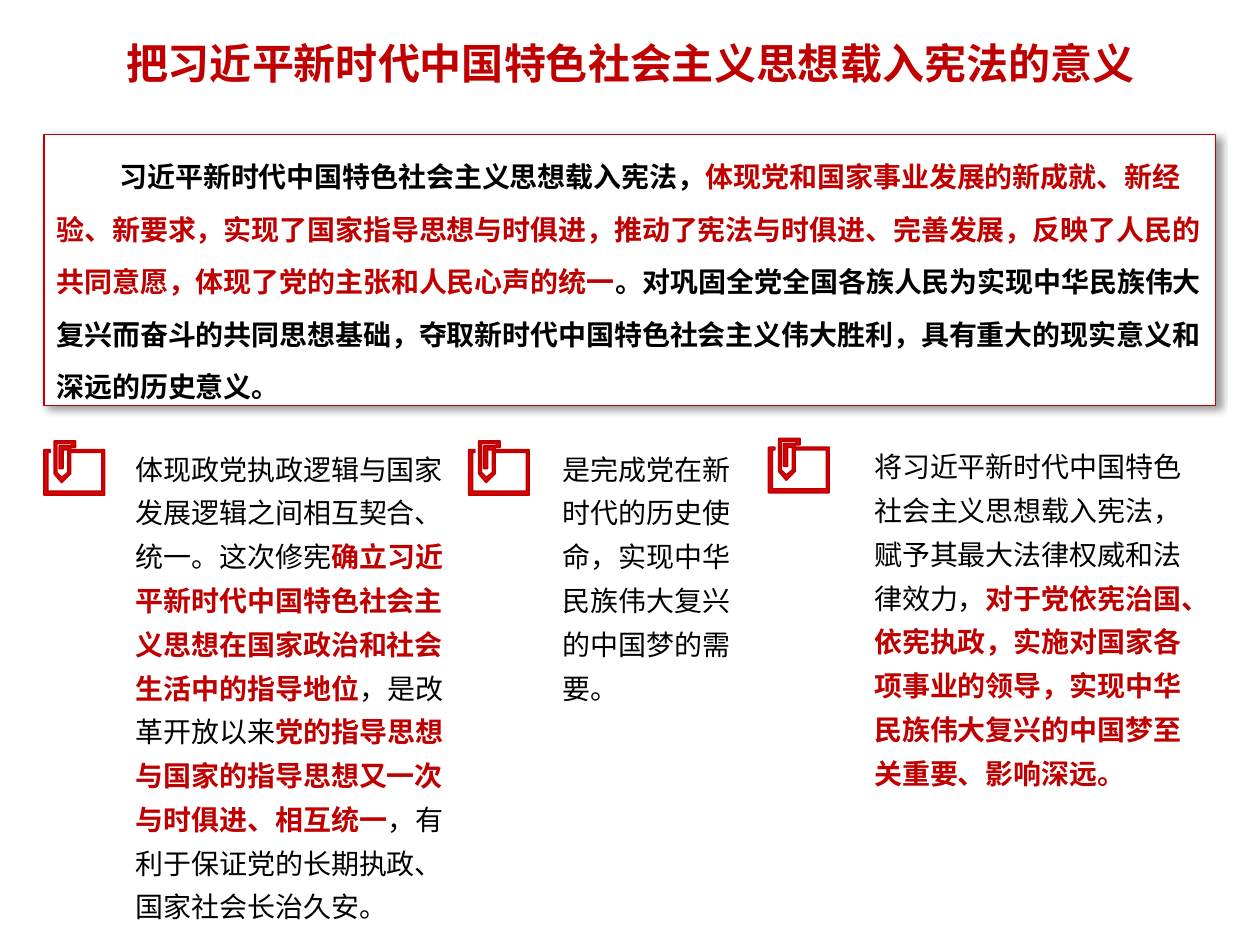
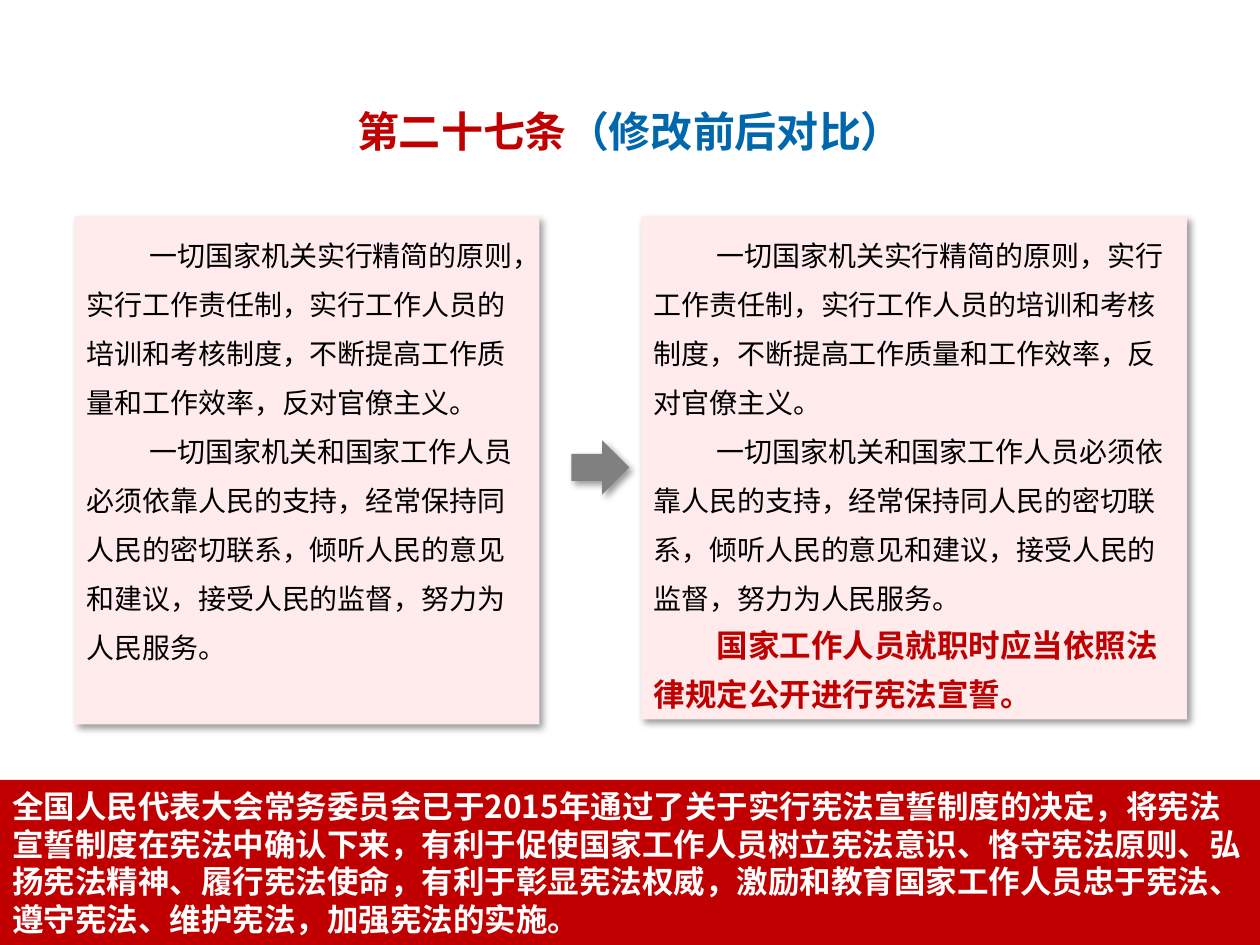
from lxml import etree
from pptx import Presentation
from pptx.dml.color import RGBColor
from pptx.enum.shapes import MSO_SHAPE
from pptx.enum.text import MSO_ANCHOR, MSO_AUTO_SIZE, PP_ALIGN
from pptx.oxml.ns import qn
from pptx.util import Pt

RECTANGLE = MSO_SHAPE.RECTANGLE
RIGHT_ARROW = MSO_SHAPE.RIGHT_ARROW
TOP = MSO_ANCHOR.TOP
MIDDLE = MSO_ANCHOR.MIDDLE
NO_AUTOFIT = MSO_AUTO_SIZE.NONE
LEFT = PP_ALIGN.LEFT
CENTER = PP_ALIGN.CENTER

COLORS = {
    "red": "C00000", "icon": "D8060A", "blue": "0067AC", "pink": "FFEBEB",
    "gray": "808080", "black": "000000", "white": "FFFFFF",
}
BODY_FONT = "Noto Sans CJK SC"
TITLE_LAYOUT = 5
SLIDE_WIDTH, SLIDE_HEIGHT = 720, 540
EMU_PER_POINT = 12700

# Paperclip outline in hundredths of an inch
CLIP_UNIT = Pt(0.72)
CLIP_OUTLINE = [
    (8, 0), (25, 0), (25, 5), (22, 5), (22, 2), (10, 2), (10, 25), (14, 29),
    (19, 25), (19, 7), (15, 7), (15, 22), (12, 22), (12, 4), (21, 4), (21, 7),
    (48, 7), (48, 43), (0, 43), (0, 7), (5, 7), (5, 9), (3, 9), (3, 40),
    (46, 40), (46, 9), (21, 9), (21, 26), (14, 33), (8, 26),
]

# Clip position, text position and width, then the text runs
REASONS = [
    ((25.2, 252), (70.6, 249.1, 204.5, 285.1), [
        "体现政党执政逻辑与国家发展逻辑之间相互契合、统一。这次修宪",
        ("确立习近平新时代中国特色社会主义思想在国家政治和社会生活中的指导地位", "red", True),
        "，是改革开放以来",
        ("党的指导思想与国家的指导思想又一次与时俱进、相互统一", "red", True),
        "，有利于保证党的长期执政、国家社会长治久安。",
    ]),
    ((267.8, 252), (314.6, 249.1, 122.4, 156.2), [
        "是完成党在新时代的历史使命，实现中华民族伟大复兴的中国梦的需要。",
    ]),
    ((439.2, 250.6), (492.5, 247.7, 202.3, 206.6), [
        "将习近平新时代中国特色社会主义思想载入宪法，赋予其最大法律权威和法律效力，",
        ("对于党依宪治国、依宪执政，实施对国家各项事业的领导，"
         "实现中华民族伟大复兴的中国梦至关重要、影响深远。", "red", True),
    ]),
]

ARTICLE = [
    "一切国家机关实行精简的原则，实行工作责任制，实行工作人员的培训和考核制度，"
    "不断提高工作质量和工作效率，反对官僚主义。",
    "一切国家机关和国家工作人员必须依靠人民的支持，经常保持同人民的密切联系，"
    "倾听人民的意见和建议，接受人民的监督，努力为人民服务。",
]


def color(name):
    return RGBColor.from_string(COLORS[name])


def add_run(paragraph, text, *, size=16, color_name="black", bold=False, font=BODY_FONT):
    run = paragraph.add_run()
    run.text = text
    run.font.size = Pt(size)
    run.font.bold = bold
    run.font.color.rgb = color(color_name)
    run.font.name = font
    latin = run.font._element.find(qn("a:latin"))
    east_asian = etree.Element(qn("a:ea"), typeface=font)
    latin.addnext(east_asian)


def write_paragraph(paragraph, runs, *, align=LEFT, line=None, indent=0, **style):
    """Runs are plain strings or (text, color name, bold) tuples."""
    paragraph.alignment = align
    if line:
        paragraph.line_spacing = Pt(line)
    if indent:
        paragraph._p.get_or_add_pPr().set("indent", str(Pt(indent)))
    for run in runs:
        if isinstance(run, str):
            add_run(paragraph, run, **style)
        else:
            text, color_name, bold = run
            add_run(paragraph, text, **{**style, "color_name": color_name, "bold": bold})


def prepare_frame(shape, anchor=TOP):
    frame = shape.text_frame
    frame.word_wrap = True
    frame.auto_size = NO_AUTOFIT
    frame.vertical_anchor = anchor
    return frame


def add_shadow(shape):
    effects = shape._element.spPr.find(qn("a:effectLst"))
    shadow = etree.SubElement(
        effects, qn("a:outerShdw"), blurRad=str(4 * EMU_PER_POINT),
        dist=str(3 * EMU_PER_POINT), dir="2700000", algn="tl", rotWithShape="0")
    shade = etree.SubElement(shadow, qn("a:srgbClr"), val=COLORS["black"])
    etree.SubElement(shade, qn("a:alpha"), val="40000")


def paint(shape, fill, line=None, line_width=0.75, shadow=False):
    shape.fill.solid()
    shape.fill.fore_color.rgb = color(fill)
    if line:
        shape.line.color.rgb = color(line)
        shape.line.width = Pt(line_width)
    else:
        shape.line.fill.background()
    shape.shadow.inherit = False
    if shadow:
        add_shadow(shape)


def add_box(slide, kind, box, fill, **look):
    shape = slide.shapes.add_shape(kind, *map(Pt, box))
    paint(shape, fill, **look)
    return shape


def add_title_slide(presentation, runs, top, height, font=BODY_FONT):
    slide = presentation.slides.add_slide(presentation.slide_layouts[TITLE_LAYOUT])
    title = slide.shapes.title
    title.left, title.top = Pt(0), Pt(top)
    title.width, title.height = Pt(SLIDE_WIDTH), Pt(height)
    frame = prepare_frame(title, MIDDLE)
    write_paragraph(frame.paragraphs[0], runs, align=CENTER, size=24,
                    color_name="red", bold=True, font=font)
    return slide


def add_clip(slide, left, top):
    builder = slide.shapes.build_freeform(*CLIP_OUTLINE[0], scale=CLIP_UNIT)
    builder.add_line_segments(CLIP_OUTLINE[1:], close=True)
    clip = builder.convert_to_shape(Pt(left), Pt(top))
    paint(clip, "icon", line="red", line_width=1)


def add_reason(slide, clip_position, box, runs):
    add_clip(slide, *clip_position)
    text_box = slide.shapes.add_textbox(*map(Pt, box))
    write_paragraph(prepare_frame(text_box).paragraphs[0], runs, line=25)


def add_article(slide, box, paragraphs):
    panel = add_box(slide, RECTANGLE, box, "pink", shadow=True)
    frame = prepare_frame(panel)
    for index, text in enumerate(paragraphs):
        paragraph = frame.add_paragraph() if index else frame.paragraphs[0]
        write_paragraph(paragraph, [text], line=28, indent=36)
    return frame


def build_significance(presentation):
    slide = add_title_slide(
        presentation, ["把习近平新时代中国特色社会主义思想载入宪法的意义"], 18, 36)

    # Summary panel
    panel = add_box(slide, RECTANGLE, (25.2, 77, 669.6, 154.8), "white",
                    line="red", shadow=True)
    write_paragraph(prepare_frame(panel).paragraphs[0], [
        "习近平新时代中国特色社会主义思想载入宪法，",
        ("体现党和国家事业发展的新成就、新经验、新要求，实现了国家指导思想与时俱进，"
         "推动了宪法与时俱进、完善发展，反映了人民的共同意愿，"
         "体现了党的主张和人民心声的统一", "red", True),
        "。对巩固全党全国各族人民为实现中华民族伟大复兴而奋斗的共同思想基础，"
        "夺取新时代中国特色社会主义伟大胜利，具有重大的现实意义和深远的历史意义。",
    ], line=30, indent=36, bold=True)

    # Three reasons
    for reason in REASONS:
        add_reason(slide, *reason)


def build_comparison(presentation):
    slide = add_title_slide(
        presentation, ["第二十七条", ("（修改前后对比）", "blue", True)], 55.4, 38.9, font="Arial")

    # Article before and after the change
    add_box(slide, RIGHT_ARROW, (326.5, 251.6, 33.1, 31), "gray", shadow=True)
    add_article(slide, (42.5, 123.8, 265.7, 290.2), ARTICLE)
    amended = add_article(slide, (366.5, 123.8, 311.8, 287.3), ARTICLE)
    write_paragraph(amended.add_paragraph(),
                    ["国家工作人员就职时应当依照法律规定公开进行宪法宣誓。"],
                    line=28, indent=36, size=18, color_name="red", bold=True)

    # Closing band
    band_top = 445.7
    band = add_box(slide, RECTANGLE,
                   (0, band_top, SLIDE_WIDTH, SLIDE_HEIGHT - band_top), "red")
    write_paragraph(prepare_frame(band, MIDDLE).paragraphs[0], [
        "全国人民代表大会常务委员会已于2015年通过了关于实行宪法宣誓制度的决定，"
        "将宪法宣誓制度在宪法中确认下来，有利于促使国家工作人员树立宪法意识、"
        "恪守宪法原则、弘扬宪法精神、履行宪法使命，有利于彰显宪法权威，"
        "激励和教育国家工作人员忠于宪法、遵守宪法、维护宪法，加强宪法的实施。",
    ], line=21.5, size=18, color_name="white", bold=True)


def main():
    presentation = Presentation()
    presentation.slide_width = Pt(SLIDE_WIDTH)
    presentation.slide_height = Pt(SLIDE_HEIGHT)
    build_significance(presentation)
    build_comparison(presentation)
    presentation.save("out.pptx")


if __name__ == "__main__":
    main()
